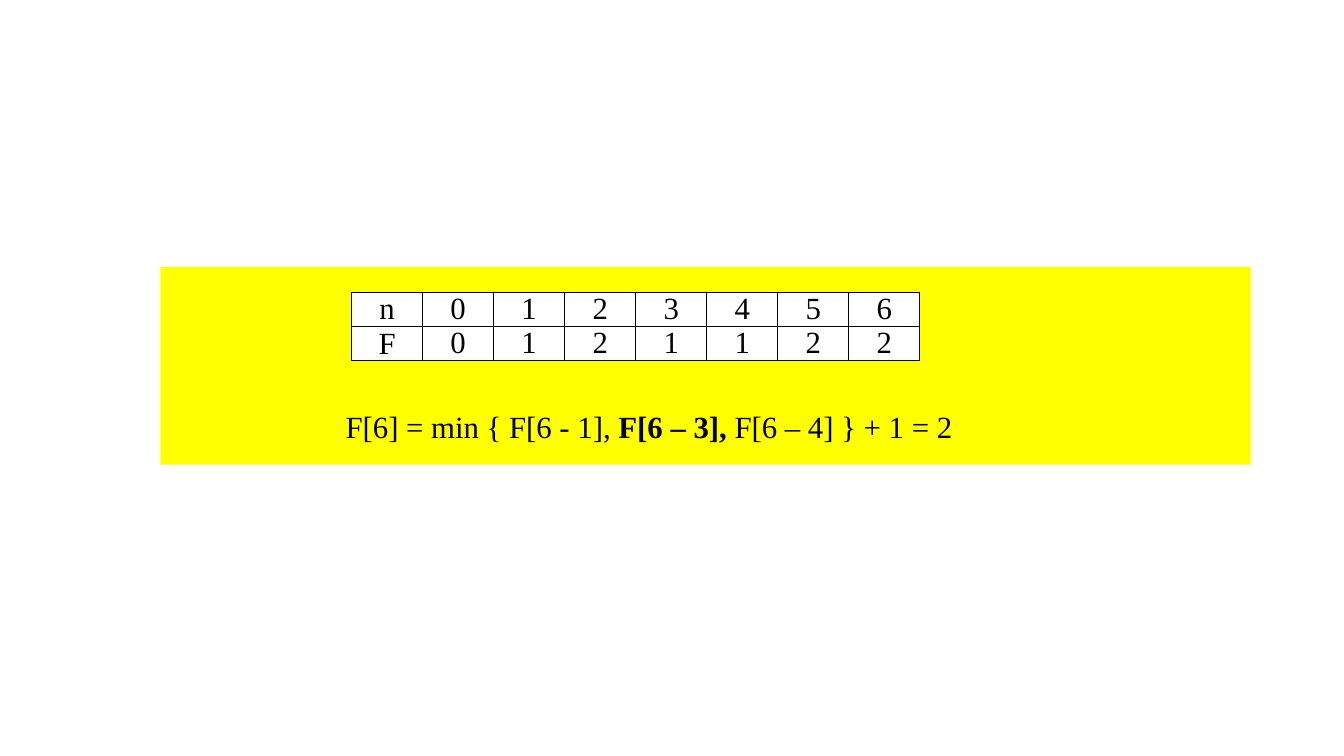
from dataclasses import dataclass

from lxml import etree
from pptx import Presentation
from pptx import util as u
from pptx.dml.color import RGBColor
from pptx.enum import shapes, text
from pptx.oxml import ns


@dataclass(frozen=True)
class Theme:
    font: str = "Times New Roman"
    size: int = 22
    ink: str = "000000"
    paper: str = "FFFFFF"
    panel: str = "FFFF00"
    border: float = 1


def apply(target, values):
    for name, value in values.items():
        setattr(target, name, value)


def paint(fill, colour):
    fill.solid()
    fill.fore_color.rgb = RGBColor.from_string(colour)


class SlideBuilder:
    def __init__(self, page, theme):
        self.page = page
        self.theme = theme

    def add_span(self, para, words, bold=False):
        span = para.add_run()
        span.text = words
        apply(span.font, {"name": self.theme.font, "size": u.Pt(self.theme.size), "bold": bold})
        span.font.color.rgb = RGBColor.from_string(self.theme.ink)

    def panel(self, *place):
        box = self.page.shapes.add_shape(shapes.MSO_SHAPE.RECTANGLE, *map(u.Cm, place))
        box.shadow.inherit = False
        paint(box.fill, self.theme.panel)
        box.line.fill.background()

    def border_cell(self, cell):
        properties = cell._tc.get_or_add_tcPr()
        for index, side in enumerate(("a:lnL", "a:lnR", "a:lnT", "a:lnB")):
            line = etree.Element(ns.qn(side), w=str(u.Pt(self.theme.border)))
            fill = etree.SubElement(line, ns.qn("a:solidFill"))
            etree.SubElement(fill, ns.qn("a:srgbClr"), val=self.theme.ink)
            properties.insert(index, line)

    def table(self, rows, left, top, column_width, row_height):
        count = len(rows[0])
        size = (column_width * count, row_height * len(rows))
        frame = self.page.shapes.add_table(len(rows), count, *map(u.Cm, (left, top, *size)))
        grid = frame.table
        apply(grid, {"first_row": False, "horz_banding": False})
        for column in grid.columns:
            column.width = u.Cm(column_width)
        for row, values in zip(grid.rows, rows):
            row.height = u.Cm(row_height)
            for index, (cell, value) in enumerate(zip(row.cells, values)):
                apply(cell, {"margin_left": u.Cm(0.18), "margin_right": u.Cm(0.18),
                             "margin_top": 0, "margin_bottom": 0})
                # Only the row labels are centred vertically
                if index == 0:
                    cell.vertical_anchor = text.MSO_ANCHOR.MIDDLE
                para = cell.text_frame.paragraphs[0]
                para.alignment = text.PP_ALIGN.CENTER
                self.add_span(para, value)
                paint(cell.fill, self.theme.paper)
                self.border_cell(cell)

    def label(self, spans, *place):
        box = self.page.shapes.add_textbox(*map(u.Cm, place))
        apply(box.text_frame, {"word_wrap": False,
                               "auto_size": text.MSO_AUTO_SIZE.SHAPE_TO_FIT_TEXT})
        for words, bold in spans:
            self.add_span(box.text_frame.paragraphs[0], words, bold)


def main():
    deck = Presentation()
    apply(deck, {"slide_width": u.Cm(33.87), "slide_height": u.Cm(19.05)})
    page = deck.slides.add_slide(deck.slide_layouts[6])
    builder = SlideBuilder(page, Theme())

    # Yellow backdrop
    builder.panel(4.04, 6.73, 27.48, 4.98)

    # Values of F for each n
    builder.table(["n0123456", "F0121122"], 8.86, 7.37, 1.79, 0.86)

    # Recurrence for F[6], with the chosen term in bold
    builder.label([("F[6] = min { F[6 - 1], ", False),
                   ("F[6 – 3], ", True),
                   ("F[6 – 4] } + 1 = 2", False)], 8.46, 10.16, 15.95, 1.19)

    deck.save("out.pptx")


if __name__ == "__main__":
    main()
